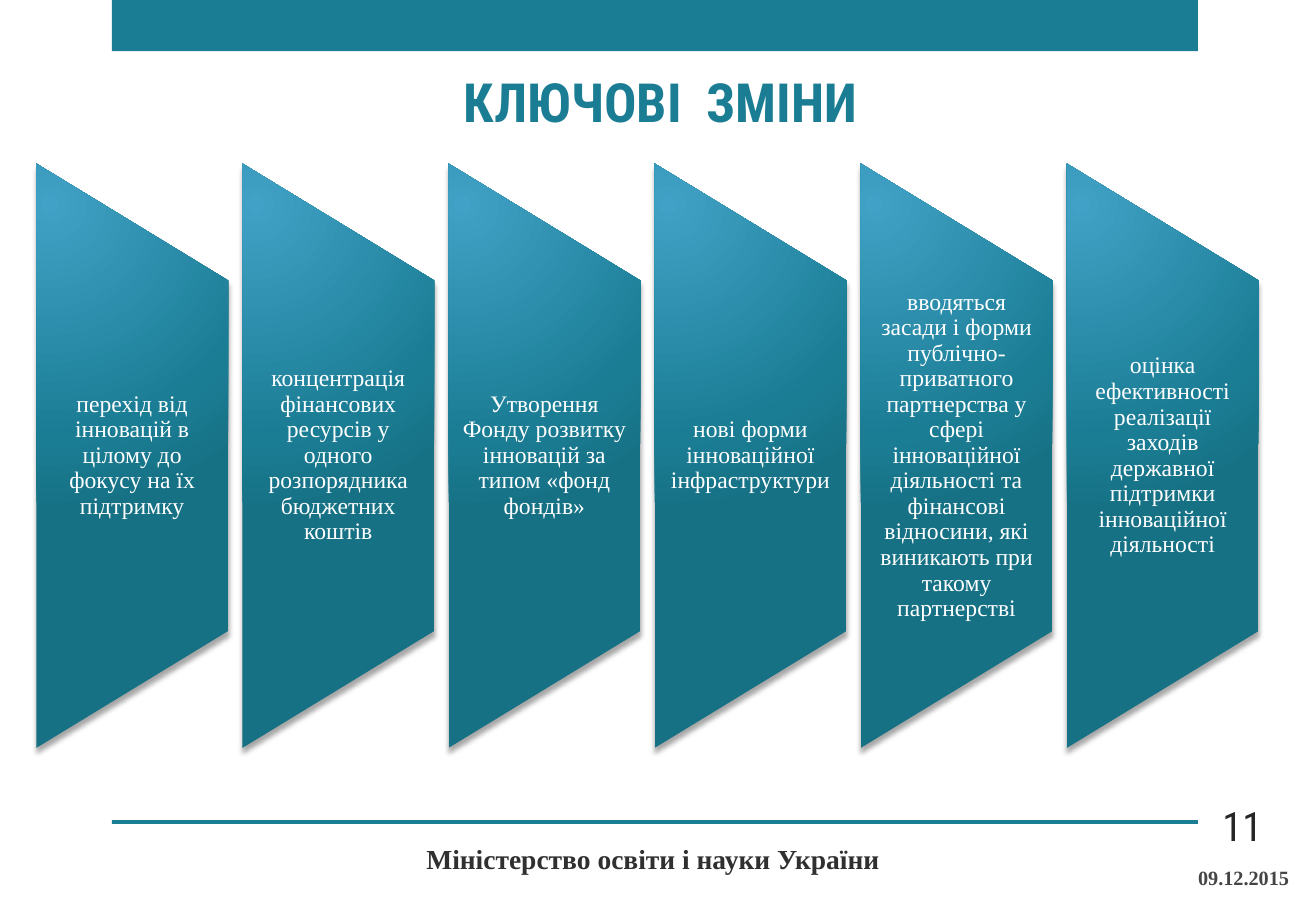
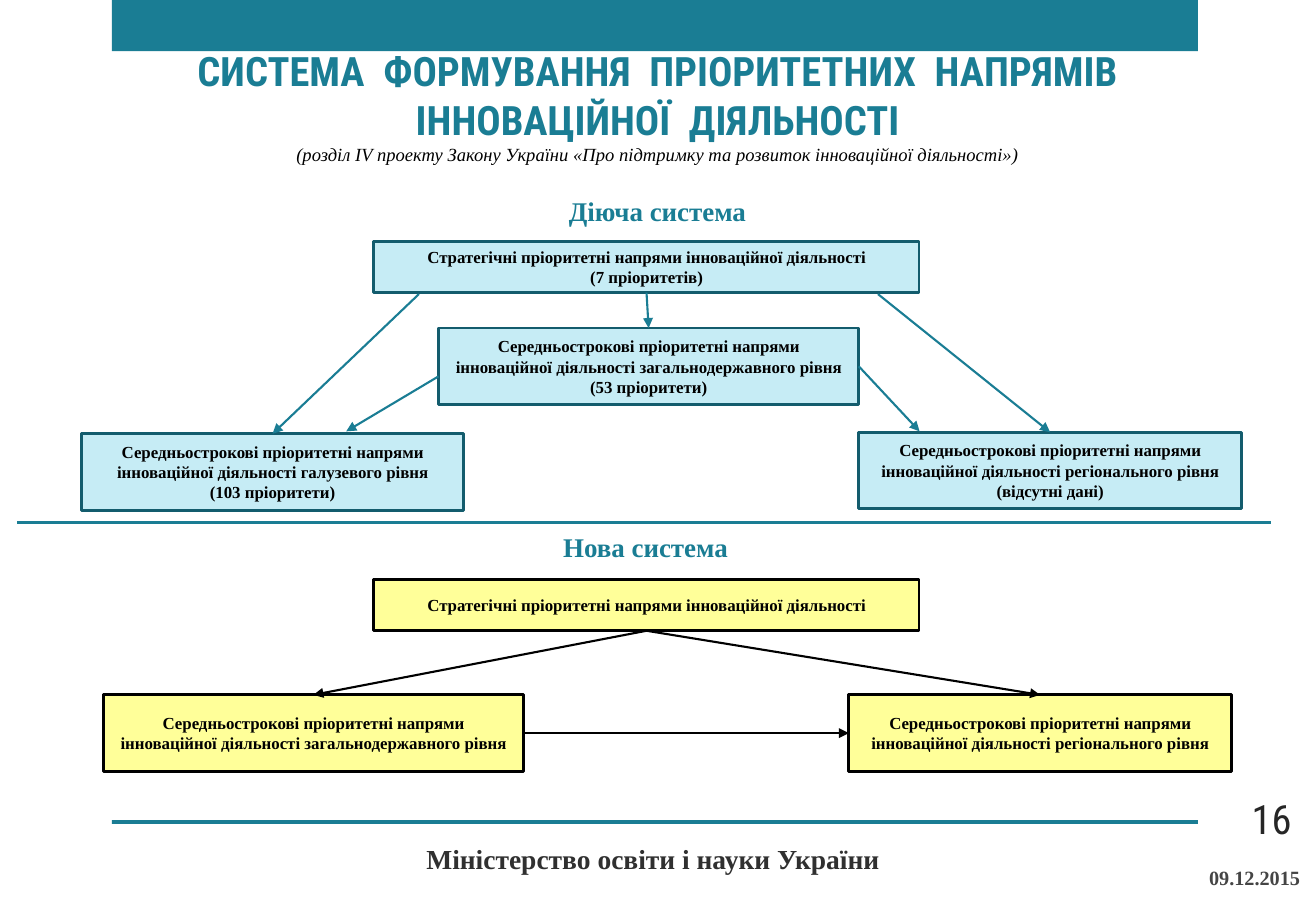
"""Build two slides on key changes and priority systems in innovation policy."""
from dataclasses import dataclass
from typing import Optional, Union

from lxml import etree
from pptx import Presentation, dml, oxml
from pptx import util as u
from pptx.dml import color
from pptx.enum import shapes, text
from pptx.oxml import ns


@dataclass(frozen=True)
class Style:
    size: float
    color: str
    font: str = "Times New Roman"
    bold: bool = False
    italic: bool = False
    align: text.PP_ALIGN = text.PP_ALIGN.CENTER
    spacing: float = 1.0


@dataclass(frozen=True)
class Theme:
    teal: str = "1A7D94"
    black: str = "000000"
    pale_blue: str = "C6ECF5"
    dark_teal: str = "135C6D"
    yellow: str = "FFFF99"
    panel_stops: tuple = ((0, "41A1C6"), (76, "1A7D94"), (100, "177185"))
    title: Style = Style(32, "1A7D94", "Roboto Condensed", bold=True)
    long_title: Style = Style(24, "1A7D94", "Roboto Condensed", bold=True)
    subtitle: Style = Style(11, "000000", italic=True, spacing=0.9)
    heading: Style = Style(16, "1A7D94", bold=True)
    panel: Style = Style(14, "FFFFFF", spacing=0.9)
    box: Style = Style(10, "000000", bold=True)
    ministry: Style = Style(16.3, "303030", bold=True)
    date: Style = Style(12, "454545", bold=True, align=text.PP_ALIGN.RIGHT)
    number: Style = Style(24, "262626", "Roboto Condensed", align=text.PP_ALIGN.RIGHT)


@dataclass(frozen=True)
class Area:
    left: float
    top: float
    width: float
    height: float

    def cm(self) -> tuple:
        return tuple(u.Cm(v) for v in (self.left, self.top, self.width, self.height))


@dataclass(frozen=True)
class Box:
    name: str
    area: Area
    content: str


@dataclass(frozen=True)
class Site:
    box: str
    side: int


@dataclass(frozen=True)
class Point:
    x: float
    y: float


@dataclass(frozen=True)
class Arrow:
    start: Union[Site, Point]
    end: Union[Site, Point]


@dataclass(frozen=True)
class Scheme:
    heading: str
    heading_area: Area
    fill: str
    border: str
    arrow_color: str
    boxes: tuple
    arrows: tuple


THEME = Theme()
ANCHOR = text.MSO_ANCHOR
TOP, LEFT, BOTTOM, RIGHT = range(4)

CHANGES = (
    "перехід від інновацій в цілому до фокусу на їх підтримку",
    "концентрація фінансових ресурсів у одного розпорядника бюджетних коштів",
    "Утворення Фонду розвитку інновацій за типом «фонд фондів»",
    "нові форми інноваційної інфраструктури",
    "вводяться засади і форми публічно-приватного партнерства у сфері інноваційної "
    "діяльності та фінансові відносини, які виникають при такому партнерстві",
    "оцінка ефективності реалізації заходів державної підтримки інноваційної діяльності",
)

STRATEGIC = "Стратегічні пріоритетні напрями інноваційної діяльності"
MEDIUM_TERM = "Середньострокові пріоритетні напрями інноваційної діяльності"
STATE = f"{MEDIUM_TERM} загальнодержавного рівня"
SECTORAL = f"{MEDIUM_TERM} галузевого рівня"
REGIONAL = f"{MEDIUM_TERM} регіонального рівня"

CURRENT = Scheme(
    "Діюча система", Area(9.7, 3.94, 8.1, 0.94),
    THEME.pale_blue, THEME.dark_teal, THEME.teal,
    (
        Box("strategic", Area(7.82, 5.05, 11.4, 1.07), f"{STRATEGIC}\n(7 пріоритетів)"),
        Box("state", Area(9.17, 6.86, 8.79, 1.6), f"{STATE}\n(53 пріоритети)"),
        Box("sectoral", Area(1.7, 9.07, 8, 1.6), f"{SECTORAL}\n(103 пріоритети)"),
        Box("regional", Area(17.96, 9.04, 8, 1.6), f"{REGIONAL}\n(відсутні дані)"),
    ),
    (
        Arrow(Point(8.76, 6.15), Site("sectoral", TOP)),
        Arrow(Point(18.36, 6.15), Site("regional", TOP)),
        Arrow(Site("strategic", BOTTOM), Site("state", TOP)),
        Arrow(Point(9.17, 7.87), Point(7.24, 9.02)),
        Arrow(Site("state", RIGHT), Point(19.23, 9.02)),
    ),
)
NEW = Scheme(
    "Нова система", Area(7.24, 10.97, 12.52, 0.94),
    THEME.yellow, THEME.black, THEME.black,
    (
        Box("strategic", Area(7.82, 12.12, 11.4, 1.07), STRATEGIC),
        Box("state", Area(2.16, 14.53, 8.79, 1.6), STATE),
        Box("regional", Area(17.75, 14.53, 8, 1.6), REGIONAL),
    ),
    (
        Arrow(Site("strategic", BOTTOM), Site("regional", TOP)),
        Arrow(Site("strategic", BOTTOM), Site("state", TOP)),
        Arrow(Site("state", RIGHT), Site("regional", LEFT)),
    ),
)


def rgb(value: str) -> color.RGBColor:
    return color.RGBColor.from_string(value)


def write(frame, content: str, style: Style, anchor=ANCHOR.MIDDLE) -> None:
    frame.text = content
    frame.word_wrap = True
    frame.vertical_anchor = anchor
    for paragraph in frame.paragraphs:
        paragraph.alignment = style.align
        paragraph.line_spacing = style.spacing
        for run in paragraph.runs:
            run.font.name = style.font
            run.font.size = u.Pt(style.size)
            run.font.bold = style.bold
            run.font.italic = style.italic
            run.font.color.rgb = rgb(style.color)


def add_label(slide, area: Area, content: str, style: Style, anchor=ANCHOR.MIDDLE):
    frame = slide.shapes.add_textbox(*area.cm()).text_frame
    write(frame, content, style, anchor)
    return frame


def add_rectangle(slide, area: Area, fill: str, border: Optional[str] = None):
    rectangle = slide.shapes.add_shape(shapes.MSO_SHAPE.RECTANGLE, *area.cm())
    rectangle.shadow.inherit = False
    rectangle.fill.solid()
    rectangle.fill.fore_color.rgb = rgb(fill)
    if border:
        rectangle.line.color.rgb = rgb(border)
        rectangle.line.width = u.Pt(1.75)
    else:
        rectangle.line.fill.background()
    return rectangle


def add_line(slide, start: Point, end: Point, stroke: str, width: float):
    line = slide.shapes.add_connector(
        shapes.MSO_CONNECTOR.STRAIGHT, *(u.Cm(v) for v in (start.x, start.y, end.x, end.y)))
    line.line.color.rgb = rgb(stroke)
    line.line.width = u.Pt(width)
    etree.SubElement(line.element.spPr, ns.qn("a:effectLst"))
    return line


def add_arrow(slide, arrow: Arrow, stroke: str, drawn: dict) -> None:
    ends = [Point(0, 0) if isinstance(e, Site) else e for e in (arrow.start, arrow.end)]
    line = add_line(slide, *ends, stroke, 1.25)
    if isinstance(arrow.start, Site):
        line.begin_connect(drawn[arrow.start.box], arrow.start.side)
    if isinstance(arrow.end, Site):
        line.end_connect(drawn[arrow.end.box], arrow.end.side)
    outline = line.element.spPr.find(ns.qn("a:ln"))
    etree.SubElement(outline, ns.qn("a:tailEnd"), type="triangle")


def add_panel(slide, left: float, content: str) -> None:
    width, length, middle = 4.01, 12.22, 9.53
    outline = Area(left + (width - length) / 2, middle - width / 2, length, width)
    panel = slide.shapes.add_shape(
        shapes.MSO_SHAPE.FLOWCHART_MANUAL_OPERATION, *outline.cm())
    panel.rotation = 270
    panel.line.fill.background()
    panel.shadow.inherit = False
    stops = "".join(f'<a:gs pos="{pos * 1000}"><a:srgbClr val="{shade}"/></a:gs>'
                    for pos, shade in THEME.panel_stops)
    properties = panel.element.spPr
    properties.find(ns.qn("a:prstGeom")).addnext(oxml.parse_xml(
        f'<a:gradFill {ns.nsdecls("a")} rotWithShape="1"><a:gsLst>{stops}</a:gsLst>'
        '<a:path path="circle"><a:fillToRect l="15000" t="15000" r="100000" b="100000"/>'
        '</a:path></a:gradFill>'))
    properties.find(ns.qn("a:effectLst")).append(oxml.parse_xml(
        f'<a:outerShdw {ns.nsdecls("a")} blurRad="{u.Pt(3)}" dist="{u.Pt(3)}" '
        'dir="5400000" rotWithShape="0"><a:srgbClr val="000000">'
        '<a:alpha val="35000"/></a:srgbClr></a:outerShdw>'))
    frame = add_label(slide, Area(left, 5.86, width, 7.34), content, THEME.panel)
    frame.margin_top = frame.margin_bottom = 0


def add_scheme(slide, scheme: Scheme) -> None:
    add_label(slide, scheme.heading_area, scheme.heading, THEME.heading, ANCHOR.TOP)
    drawn = {}
    for box in scheme.boxes:
        drawn[box.name] = add_rectangle(slide, box.area, scheme.fill, scheme.border)
        write(drawn[box.name].text_frame, box.content, THEME.box)
    for arrow in scheme.arrows:
        add_arrow(slide, arrow, scheme.arrow_color, drawn)


def add_framed_slide(deck, title: str, title_area: Area, title_style: Style,
                     number: str, number_at: Point, date_left: float):
    slide = deck.slides.add_slide(deck.slide_layouts[6])
    add_rectangle(slide, Area(2.34, 0, 22.71, 1.07), THEME.teal)
    add_rectangle(slide, Area(2.34, 17.15, 22.71, 0.08), THEME.teal)
    add_label(slide, title_area, title, title_style, ANCHOR.BOTTOM)
    add_label(slide, Area(3.35, 17.36, 20.62, 1.2),
              "Міністерство освіти і науки України", THEME.ministry)
    add_label(slide, Area(date_left, 17.83, 6.43, 1.02), "09.12.2015", THEME.date)
    add_label(slide, Area(number_at.x, number_at.y, 2.29, 1.02), number, THEME.number)
    return slide


def add_changes_slide(deck) -> None:
    slide = add_framed_slide(deck, "КЛЮЧОВІ  ЗМІНИ", Area(1.55, 1.55, 24.54, 1.37),
                             THEME.title, "11", Point(24.36, 16.74), 20.78)
    for index, change in enumerate(CHANGES):
        add_panel(slide, 0.76 + 4.31 * index, change)


def add_priorities_slide(deck) -> None:
    slide = add_framed_slide(
        deck, "СИСТЕМА  ФОРМУВАННЯ  ПРІОРИТЕТНИХ  НАПРЯМІВ\nІННОВАЦІЙНОЇ  ДІЯЛЬНОСТІ",
        Area(1.55, 1.14, 24.41, 1.98), THEME.long_title, "16", Point(24.97, 16.61), 21.01)
    add_label(slide, Area(1.55, 2.92, 24.41, 0.69),
              "(розділ IV проекту Закону України «Про підтримку та розвиток "
              "інноваційної діяльності»)", THEME.subtitle, ANCHOR.TOP)
    add_scheme(slide, CURRENT)
    add_line(slide, Point(0.36, 10.92), Point(26.57, 10.92), THEME.teal, 2)
    add_scheme(slide, NEW)


def main() -> None:
    deck = Presentation()
    deck.slide_width, deck.slide_height = u.Cm(27.52), u.Cm(19.05)
    add_changes_slide(deck)
    add_priorities_slide(deck)
    deck.save("out.pptx")


if __name__ == "__main__":
    main()
